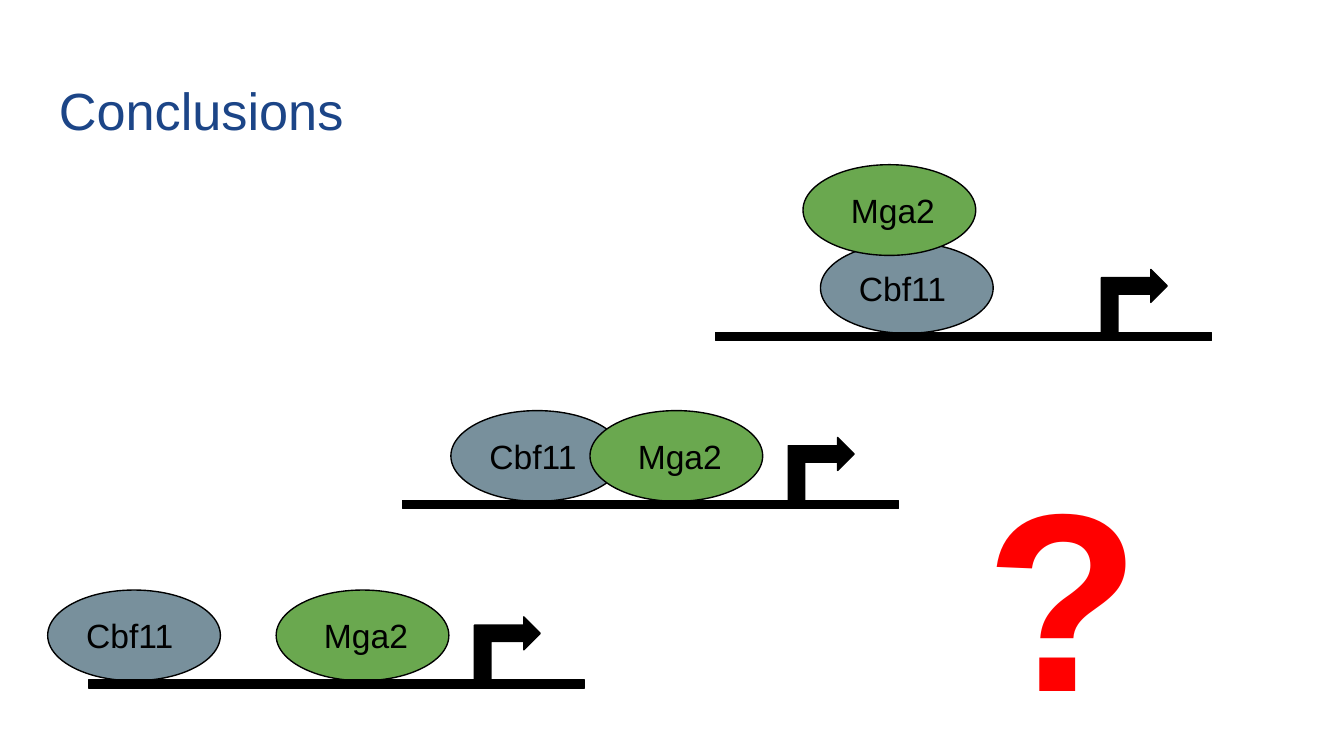
from dataclasses import dataclass

import pptx
import pptx.dml.color
import pptx.enum.shapes
import pptx.enum.text
import pptx.oxml.ns
import pptx.util

RGBColor = pptx.dml.color.RGBColor
Shape = pptx.enum.shapes.MSO_SHAPE

EMU_PER_PX = 4572
FONT = "Arial"
BLACK = RGBColor(0x00, 0x00, 0x00)
NAVY = RGBColor(0x1C, 0x45, 0x87)
SLATE = RGBColor(0x78, 0x90, 0x9C)
GREEN = RGBColor(0x6A, 0xA8, 0x4F)
RED = RGBColor(0xFF, 0x00, 0x00)


@dataclass(frozen=True)
class Protein:
    name: str
    color: RGBColor


@dataclass(frozen=True)
class Binding:
    protein: Protein
    dx: int
    dy: int = -134


@dataclass(frozen=True)
class Promoter:
    x: int
    y: int
    bindings: tuple[Binding, ...]


CBF11 = Protein("Cbf11", SLATE)
MGA2 = Protein(" Mga2", GREEN)

PROMOTERS = (
    Promoter(132, 1012, (Binding(CBF11, -61), Binding(MGA2, 279))),
    Promoter(599, 745, (Binding(CBF11, 72), Binding(MGA2, 279))),
    Promoter(1065, 495, (Binding(CBF11, 156), Binding(MGA2, 130, -250))),
)


def px(n: int) -> pptx.util.Emu:
    return pptx.util.Emu(n * EMU_PER_PX)


def set_text(sp, text: str, size: int, color: RGBColor, bold: bool = False) -> None:
    tf = sp.text_frame
    tf.word_wrap = True
    tf.margin_left = tf.margin_right = tf.margin_top = tf.margin_bottom = px(20)
    p = tf.paragraphs[0]
    p.text = text
    p.alignment = pptx.enum.text.PP_ALIGN.LEFT
    p.font.name = FONT
    p.font.size = pptx.util.Pt(size)
    p.font.bold = bold
    p.font.color.rgb = color


def add_text(s, text: str, x: int, y: int, w: int, h: int,
             size: int, color: RGBColor, bold: bool = False):
    sp = s.shapes.add_textbox(px(x), px(y), px(w), px(h))
    set_text(sp, text, size, color, bold)
    return sp


def add_solid(s, kind: Shape, x: int, y: int, w: int, h: int, color: RGBColor):
    sp = s.shapes.add_shape(kind, px(x), px(y), px(w), px(h))
    sp.shadow.inherit = False
    sp.fill.solid()
    sp.fill.fore_color.rgb = color
    sp.line.color.rgb = BLACK
    sp.line.width = pptx.util.Pt(0.75)
    return sp


def add_protein(s, protein: Protein, x: int, y: int) -> None:
    sp = add_solid(s, Shape.OVAL, x, y, 257, 135, protein.color)
    set_text(sp, protein.name, 18, BLACK)
    sp.text_frame.vertical_anchor = pptx.enum.text.MSO_ANCHOR.MIDDLE


def add_start_arrow(s, x: int, y: int) -> None:
    sp = add_solid(s, Shape.BENT_UP_ARROW, x, y, 104, 98, BLACK)
    sp.rotation = 90
    xfrm = sp.element.spPr.find(pptx.oxml.ns.qn("a:xfrm"))
    xfrm.set("flipH", "1")


def add_promoter(s, promoter: Promoter) -> None:
    for b in promoter.bindings:
        add_protein(s, b.protein, promoter.x + b.dx, promoter.y + b.dy)
    add_solid(s, Shape.RECTANGLE, promoter.x, promoter.y, 738, 12, BLACK)
    add_start_arrow(s, promoter.x + 571, promoter.y - 91)


def main() -> None:
    prs = pptx.Presentation()
    prs.slide_width, prs.slide_height = px(2000), px(1125)
    s = prs.slides.add_slide(prs.slide_layouts[6])
    add_text(s, "Conclusions", 68, 97, 1864, 125, 28, NAVY)
    for promoter in PROMOTERS:
        add_promoter(s, promoter)
    sp = add_text(s, "?", 1447, 632, 274, 498, 136, RED, bold=True)
    sp.text_frame.auto_size = pptx.enum.text.MSO_AUTO_SIZE.SHAPE_TO_FIT_TEXT
    prs.save("out.pptx")


if __name__ == "__main__":
    main()
